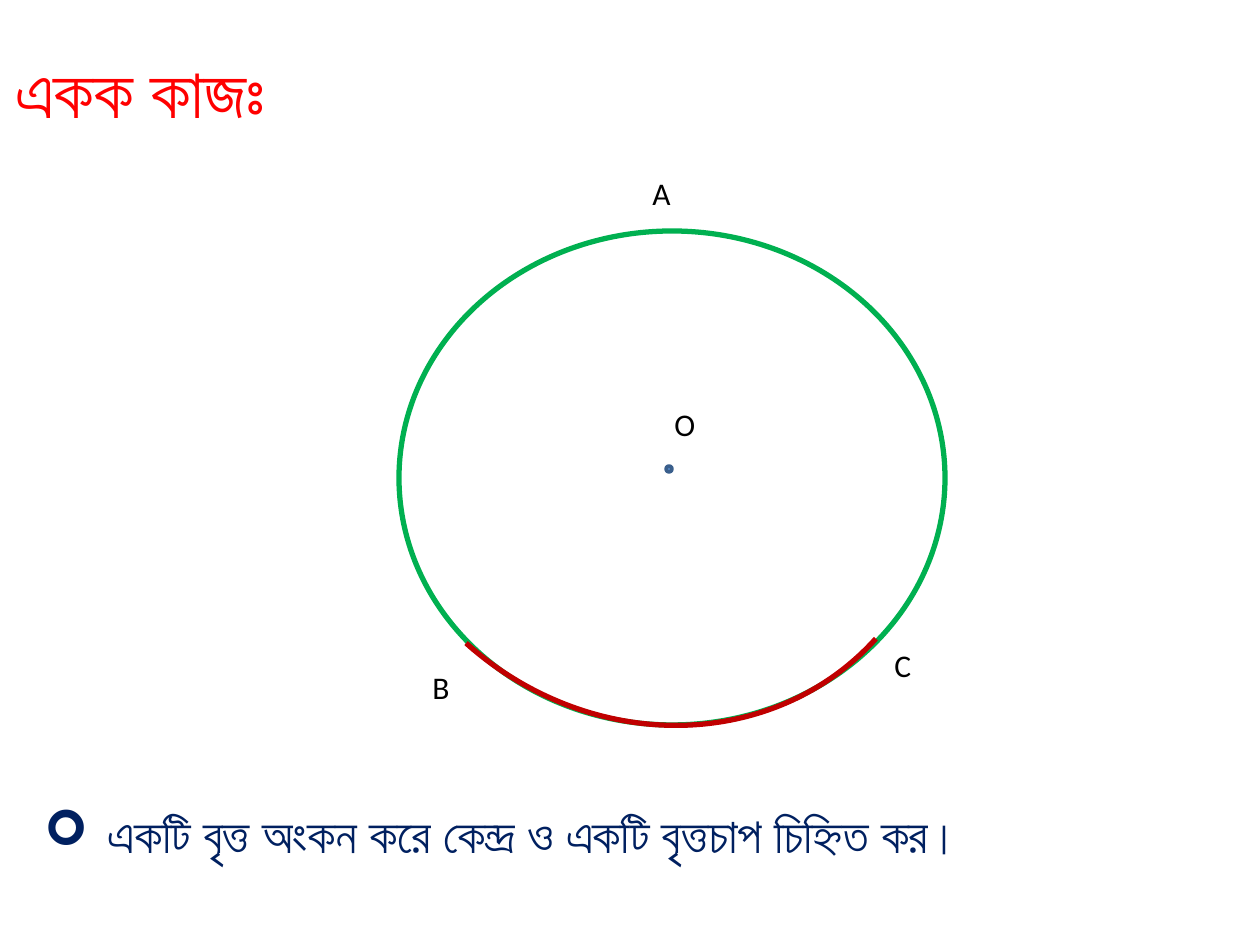
from lxml.etree import SubElement
from pptx import Presentation
from pptx.dml.color import RGBColor
from pptx.enum.shapes import MSO_SHAPE
from pptx.enum.text import MSO_AUTO_SIZE
from pptx.oxml.ns import qn
from pptx.util import Emu, Pt

PIXELS_PER_INCH = 126
COLOURS = {
    "circle": "00B050",
    "arc": "C00000",
    "centre": "4F81BD",
    "centre_line": "3A5F8C",
    "label": "000000",
    "title": "FF0000",
    "task": "002060",
}
POINT_LABELS = [
    ("O", (662, 399, 42, 50)),
    ("B", (420, 662, 63, 50)),
    ("C", (882, 640, 32, 53)),
    ("A", (640, 168, 42, 50)),
]


def px(length):
    """Turn pixels into EMU."""
    return Emu(round(length * 914400 / PIXELS_PER_INCH))


def colour(name):
    """Look up a named colour."""
    return RGBColor.from_string(COLOURS[name])


def add_outline(slide, preset, box, line, width, fill=None, rotation=0):
    """Add a curved preset shape with an outline and an optional fill."""
    shape = slide.shapes.add_shape(preset, *map(px, box))
    shape.shadow.inherit = False
    shape.rotation = rotation
    if fill:
        shape.fill.solid()
        shape.fill.fore_color.rgb = colour(fill)
    else:
        shape.fill.background()
    shape.line.color.rgb = colour(line)
    shape.line.width = Pt(width)


def add_bullet(paragraph, symbol, indent):
    """Give a paragraph a hanging bullet."""
    properties = paragraph._p.get_or_add_pPr()
    properties.set("marL", str(indent))
    properties.set("indent", str(-indent))
    SubElement(properties, qn("a:buFont"), typeface="Wingdings")
    SubElement(properties, qn("a:buChar"), char=symbol)


def add_text(slide, text, box, ink, size, font="Calibri", wrap=True, bullet=None):
    """Add a one-paragraph text box."""
    frame = slide.shapes.add_textbox(*map(px, box)).text_frame
    frame.word_wrap = wrap
    frame.auto_size = MSO_AUTO_SIZE.SHAPE_TO_FIT_TEXT
    paragraph = frame.paragraphs[0]
    if bullet:
        add_bullet(paragraph, bullet, px(63))
    run = paragraph.add_run()
    run.text = text
    for attribute, value in {"name": font, "size": Pt(size)}.items():
        setattr(run.font, attribute, value)
    run.font.color.rgb = colour(ink)


def main():
    """Build the circle exercise slide."""
    presentation = Presentation()
    presentation.slide_width = px(1260)
    presentation.slide_height = px(945)
    slide = presentation.slides.add_slide(presentation.slide_layouts[6])

    add_outline(slide, MSO_SHAPE.OVAL, (399, 231, 546, 494), "circle", 3)
    add_outline(slide, MSO_SHAPE.OVAL, (666, 466, 6, 6), "centre_line", 2, fill="centre")
    add_outline(slide, MSO_SHAPE.ARC, (374, 135, 554, 604), "arc", 3, rotation=131.9)
    for text, box in POINT_LABELS:
        add_text(slide, text, box, "label", 18)
    add_text(slide, "একক কাজঃ", (3, 42, 379, 97), "title", 40, font="Roboto", wrap=False)
    add_text(slide, "একটি বৃত্ত অংকন করে কেন্দ্র ও একটি বৃত্তচাপ চিহ্নিত কর।",
             (32, 798, 1166, 131), "task", 28, bullet="➢")
    presentation.save("out.pptx")


if __name__ == "__main__":
    main()
